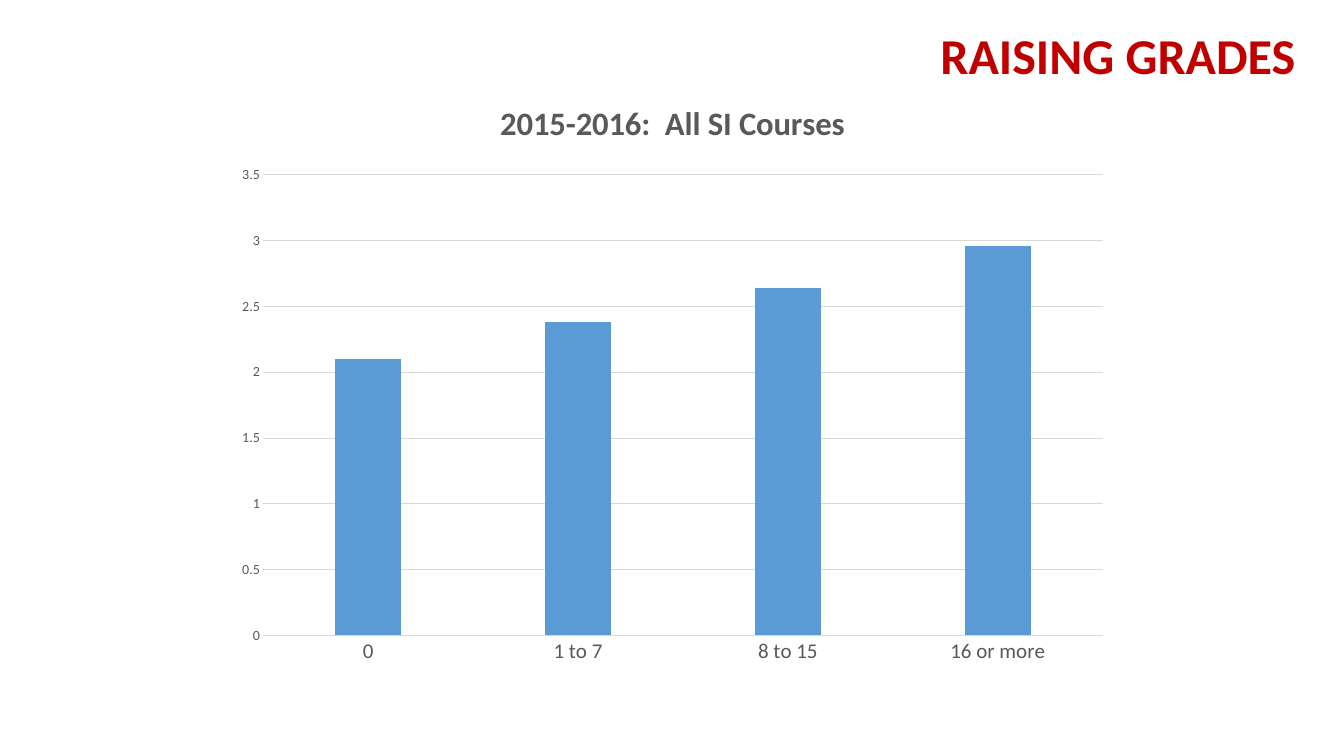
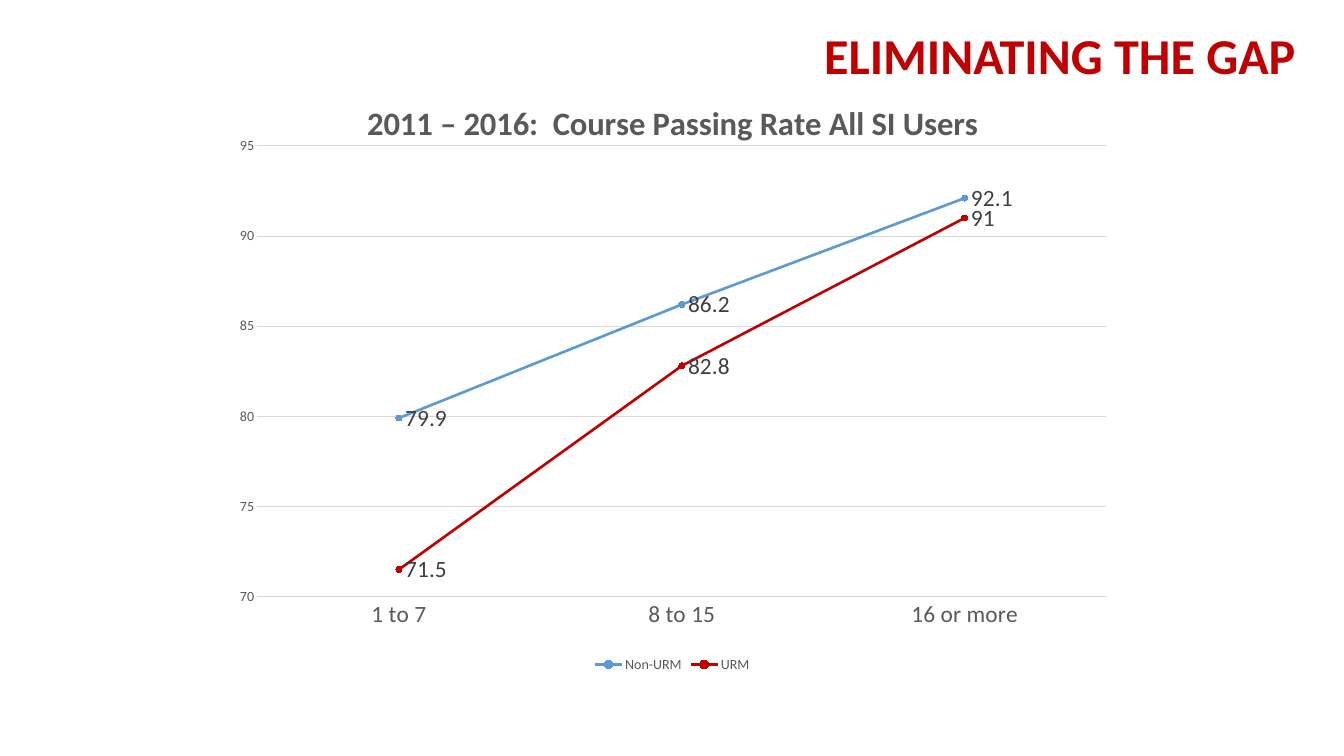
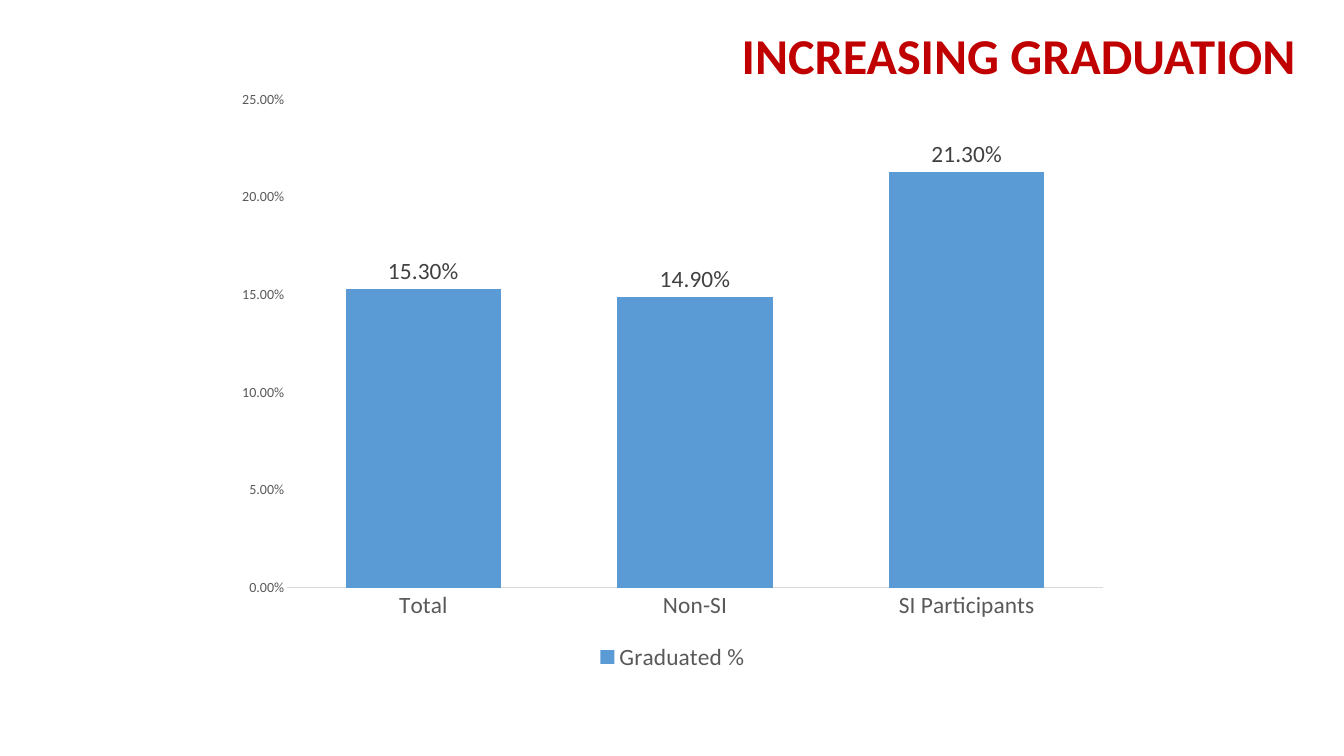
import pptx
import pptx.chart.data
import pptx.dml.color
import pptx.enum.chart
import pptx.enum.text
import pptx.util
from lxml import etree
from pptx.util import Inches

FONT = "Calibri"
RED = "C00000"
BLUE = "5B9BD5"
GREY = "595959"
DARK = "404040"
RULE = "D9D9D9"

ChartKind = pptx.enum.chart.XL_CHART_TYPE
LabelPlace = pptx.enum.chart.XL_LABEL_POSITION
Align = pptx.enum.text.PP_ALIGN


def rgb(hex_string):
    return pptx.dml.color.RGBColor.from_string(hex_string)


def set_font(font, size, color, bold=False):
    font.name = FONT
    font.size = pptx.util.Pt(size)
    font.bold = bold
    font.color.rgb = rgb(color)


def set_line(line, color, width):
    line.color.rgb = rgb(color)
    line.width = pptx.util.Pt(width)


def set_fill(fill, color):
    fill.solid()
    fill.fore_color.rgb = rgb(color)


def write(frame, text, size, color, bold=False, align=None):
    paragraph = frame.paragraphs[0]
    paragraph.alignment = align
    run = paragraph.add_run()
    run.text = text
    set_font(run.font, size, color, bold)


def place_plot(chart, **fractions):
    """Fix the inner plot area, in fractions of the chart (x, y, w, h)."""
    plot_area = chart.plots[0]._element.getparent()
    prefix = "{%s}" % plot_area.nsmap["c"]
    layout = plot_area.find(prefix + "layout")
    if layout is None:
        layout = etree.Element(prefix + "layout")
        plot_area.insert(0, layout)
    manual = etree.SubElement(layout, prefix + "manualLayout")
    settings = {"layoutTarget": "inner", "xMode": "edge", "yMode": "edge", **fractions}
    for tag, value in settings.items():
        etree.SubElement(manual, prefix + tag).set("val", str(value))


class Deck:
    """Holds the presentation, its shared style and the current slide."""

    def __init__(self):
        self.presentation = pptx.Presentation()
        self.presentation.slide_width = Inches(16)
        self.presentation.slide_height = Inches(9)
        self.slide = None

    def add_slide(self, heading, heading_width=6.12):
        self.slide = self.presentation.slides.add_slide(self.presentation.slide_layouts[6])
        set_fill(self.slide.background.fill, "FFFFFF")
        box = self.slide.shapes.add_textbox(
            Inches(15.52 - heading_width), Inches(0.24), Inches(heading_width), Inches(0.82))
        box.text_frame.word_wrap = True
        box.text_frame.auto_size = pptx.enum.text.MSO_AUTO_SIZE.SHAPE_TO_FIT_TEXT
        write(box.text_frame, heading, 43, RED, bold=True, align=Align.RIGHT)

    def add_chart(self, kind, categories, series, title=None, category_size=20,
                  number_format="General", grid=True, legend_size=None):
        data = pptx.chart.data.CategoryChartData(number_format=number_format)
        data.categories = categories
        for name, values in series.items():
            data.add_series(name, values)
        chart = self.slide.shapes.add_chart(
            kind, Inches(2.67), Inches(0.94), Inches(10.67), Inches(7.11), data).chart
        set_font(chart.font, 10, "000000")
        chart.has_title = title is not None
        if title:
            write(chart.chart_title.text_frame, title, 28, GREY, bold=True)
        chart.has_legend = legend_size is not None
        if legend_size:
            chart.legend.position = pptx.enum.chart.XL_LEGEND_POSITION.BOTTOM
            chart.legend.include_in_layout = False
            set_font(chart.legend.font, legend_size, GREY)
        self.style_axes(chart, category_size, number_format, grid)
        return chart

    def style_axes(self, chart, category_size, number_format, grid):
        no_tick = pptx.enum.chart.XL_TICK_MARK.NONE
        for axis, size in ((chart.category_axis, category_size), (chart.value_axis, 12)):
            axis.major_tick_mark = axis.minor_tick_mark = no_tick
            set_font(axis.tick_labels.font, size, GREY)
        set_line(chart.category_axis.format.line, RULE, 0.75)
        values = chart.value_axis
        values.format.line.fill.background()
        values.tick_labels.number_format = number_format
        values.tick_labels.number_format_is_linked = False
        values.has_major_gridlines = grid
        if grid:
            set_line(values.major_gridlines.format.line, RULE, 0.75)

    def add_columns(self, categories, series, gap, overlap=0, **options):
        chart = self.add_chart(ChartKind.COLUMN_CLUSTERED, categories, series, **options)
        plot = chart.plots[0]
        plot.vary_by_categories = False
        plot.gap_width = gap
        plot.overlap = overlap
        for columns in plot.series:
            set_fill(columns.format.fill, BLUE)
        return chart

    def add_lines(self, categories, series, colors, minimum, **options):
        chart = self.add_chart(ChartKind.LINE_MARKERS, categories, series, **options)
        chart.value_axis.minimum_scale = minimum
        chart.plots[0].vary_by_categories = False
        for line, color in zip(chart.plots[0].series, colors):
            line.smooth = False
            set_line(line.format.line, color, 2.25)
            line.marker.style = pptx.enum.chart.XL_MARKER_STYLE.CIRCLE
            line.marker.size = 5
            set_fill(line.marker.format.fill, color)
            set_line(line.marker.format.line, color, 0.75)
        return chart

    def label_values(self, chart, position, number_format="General"):
        for series in chart.plots[0].series:
            labels = series.data_labels
            labels.show_value = True
            labels.position = position
            labels.number_format = number_format
            labels.number_format_is_linked = False
            set_font(labels.font, 20, DARK)


def main():
    deck = Deck()
    visits = ["1 to 7", "8 to 15", "16 or more"]

    deck.add_slide("RAISING GRADES")
    deck.add_columns(["0"] + visits, {"Series 1": [2.1, 2.38, 2.64, 2.96]},
                     gap=219, overlap=-27, category_size=18,
                     title="2015-2016:  All SI Courses")

    deck.add_slide("ELIMINATING THE GAP")
    passing = deck.add_lines(
        visits, {"Non-URM": [79.9, 86.2, 92.1], "URM": [71.5, 82.8, 91]},
        colors=[BLUE, RED], minimum=70, legend_size=12,
        title="2011 – 2016:  Course Passing Rate All SI Users")
    place_plot(passing, x=0.037, y=0.112, w=0.947, h=0.755)
    deck.label_values(passing, LabelPlace.RIGHT)

    deck.add_slide("INCREASING GRADUATION", heading_width=7.02)
    percent = "0.00%"
    graduation = deck.add_columns(
        ["Total", "Non-SI", "SI Participants"], {"Graduated %": [0.153, 0.149, 0.213]},
        gap=75, number_format=percent, grid=False, legend_size=20)
    deck.label_values(graduation, LabelPlace.OUTSIDE_END, percent)

    deck.presentation.save("out.pptx")


if __name__ == "__main__":
    main()
